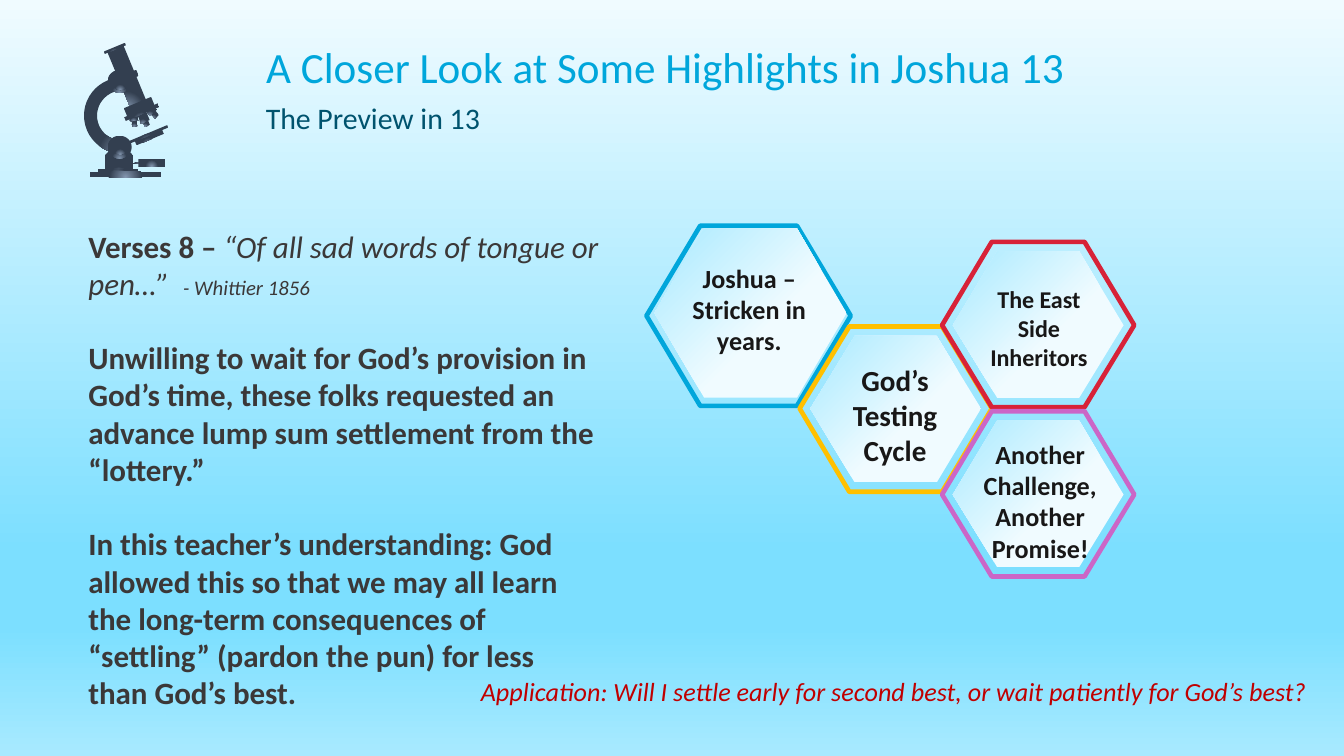
"""Build the Joshua 13 highlights slide with its microscope and hexagon cycle."""
from lxml import etree
from pptx import Presentation
from pptx import util as u
from pptx.dml.color import RGBColor
from pptx.enum import shapes, text
from pptx.oxml.ns import qn

PX = 9144
FONT = "Calibri"


def shade(fill, element, stops, angle=None):
    """Give a fill a linear gradient, or a radial one when no angle is set."""
    fill.gradient()
    stop_list = element.find(".//" + qn("a:gsLst"))
    for old in list(stop_list):
        stop_list.remove(old)
    for position, color in stops:
        stop = etree.SubElement(stop_list, qn("a:gs"), pos=str(position * 1000))
        etree.SubElement(stop, qn("a:srgbClr"), val=color)
    if angle is not None:
        fill.gradient_angle = angle
        return
    linear = element.find(".//" + qn("a:lin"))
    radial = etree.Element(qn("a:path"), path="circle")
    etree.SubElement(radial, qn("a:fillToRect"), l="50000", t="130000", r="50000", b="-30000")
    linear.getparent().replace(linear, radial)


def write(box, place, paragraphs, align=text.PP_ALIGN.LEFT, gap=0, wrap=True):
    """Place a box and fill it with paragraphs of (words, size, color, bold, italic)."""
    box.left, box.top, box.width, box.height = [u.Emu(v * PX) for v in place]
    frame = box.text_frame
    frame.word_wrap = wrap
    frame.auto_size = text.MSO_AUTO_SIZE.NONE
    for index, pieces in enumerate(paragraphs):
        paragraph = frame.add_paragraph() if index else frame.paragraphs[0]
        paragraph.alignment = align
        paragraph.space_before = u.Pt(gap if index else 0)
        for words, size, color, bold, italic in pieces:
            run = paragraph.add_run()
            run.text = words
            run.font.name, run.font.size = FONT, u.Pt(size)
            run.font.bold, run.font.italic = bold, italic
            run.font.color.rgb = RGBColor.from_string(color)


deck = Presentation()
deck.slide_width = u.Emu(1000 * PX)
deck.slide_height = u.Emu(deck.slide_width * 9 // 16)
slide = deck.slides.add_slide(deck.slide_layouts[5])
shade(slide.background.fill, slide.element,
      [(0, "F0FBFF"), (73, "7CDFFF"), (83, "7CDFFF"), (100, "A8EAFF")], 270)

RECT, OVAL = shapes.MSO_SHAPE.RECTANGLE, shapes.MSO_SHAPE.OVAL
SNIP, ARC = shapes.MSO_SHAPE.SNIP_2_SAME_RECTANGLE, shapes.MSO_SHAPE.BLOCK_ARC
microscope_parts = [
    (RECT, 100, 100, 22, 4, 337.3, []),
    (RECT, 95, 99, 31, 2, 337.3, []),
    (SNIP, 78, 109, 21, 22, 0, [0.31, 0]),
    (RECT, 106, 85, 4, 9, 337.5, []),
    (RECT, 103, 82, 7, 9, 337.5, []),
    (RECT, 88, 34, 13, 46, 337.5, []),
    (RECT, 77, 35, 17, 2, 337.5, []),
    (RECT, 86, 55, 17, 5, 337.5, []),
    (RECT, 93, 76, 22, 9, 337.5, []),
    (RECT, 112, 79, 4, 9, 319.5, []),
    (RECT, 108, 76, 7, 9, 319.5, []),
    (RECT, 98, 85, 4, 9, 355.5, []),
    (RECT, 96, 81, 7, 9, 355.5, []),
    (RECT, 92, 82, 27, 3, 337.5, []),
    (ARC, 63, 57, 57, 58, 270, [116.47, 0, 0.17]),
    (OVAL, 80, 52, 18, 17, 0, []),
    (OVAL, 83, 55, 13, 12, 0, []),
    (OVAL, 80, 101, 18, 17, 0, []),
    (OVAL, 83, 103, 13, 12, 0, []),
    (RECT, 93, 121, 26, 1, 0, []),
    (RECT, 103, 118, 20, 6, 0, []),
    (RECT, 73, 126, 30, 6, 0, []),
    (RECT, 67, 128, 53, 4, 0, []),
]
microscope = slide.shapes.add_group_shape()
for kind, left, top, width, height, turn, adjustments in microscope_parts:
    part = microscope.shapes.add_shape(kind, *[u.Emu(v * PX) for v in (left, top, width, height)])
    part.rotation = turn
    part.shadow.inherit = False
    part.line.fill.background()
    for index, value in enumerate(adjustments):
        part.adjustments[index] = value
    shade(part.fill, part.element, [(0, "8497B0"), (46, "333F50"), (100, "333F50")])

EVEN = (8, 7, 8, 7)
cycle = [
    ((481, 168, 152, 134), (6, 2, 3, 6), "00A6DB",
     "Joshua – Stricken in years.", 14, (500, 190, 115, 106)),
    ((595, 243, 143, 123), EVEN, "FFC000",
     "God’s Testing Cycle", 15.6, (612, 265, 108, 76)),
    ((701, 180, 143, 123), EVEN, "D72238",
     "The East Side Inheritors", 12.9, (719, 207, 108, 69)),
    ((701, 306, 143, 123), EVEN, "CB66C7",
     "Another Challenge, Another Promise!", 14, (720, 321, 108, 97)),
]
for rim, inset, color, label, size, label_place in cycle:
    left, top, width, height = rim
    core = (left + inset[0], top + inset[1],
            width - inset[0] - inset[2], height - inset[1] - inset[3])
    for x, y, w, h in (rim, core):
        corner = round(0.26 * w)
        outline = slide.shapes.build_freeform(x + corner, y, scale=PX)
        outline.add_line_segments([
            (x + w - corner, y), (x + w, y + h / 2), (x + w - corner, y + h),
            (x + corner, y + h), (x, y + h / 2)], close=True)
        hexagon = outline.convert_to_shape()
        hexagon.shadow.inherit = False
        if (x, y, w, h) == rim:
            hexagon.fill.background()
            hexagon.line.color.rgb = RGBColor.from_string(color)
            hexagon.line.width = u.Pt(2.5)
        else:
            hexagon.line.fill.background()
            shade(hexagon.fill, hexagon.element, [(41, "F0FBFF"), (100, "A8EAFF")], 135)
    write(slide.shapes.add_textbox(0, 0, 0, 0), label_place,
          [[(label, size, "181717", True, False)]], text.PP_ALIGN.CENTER)

GRAY = "3B3838"
commentary = [
    [("Verses 8 – ", 16.6, GRAY, True, False),
     ("“Of all sad words of tongue or pen…”  ", 16.6, GRAY, False, True),
     ("- Whittier 1856", 11.1, GRAY, False, True)],
    [("Unwilling to wait for God’s provision in God’s time, these folks requested an "
      "advance lump sum settlement from the “lottery.”", 16.6, GRAY, True, False)],
    [("In this teacher’s understanding: God allowed this so that we may all learn the "
      "long-term consequences of “settling” (pardon the pun) for less than God’s best.",
      16.6, GRAY, True, False)],
]
write(slide.shapes.add_textbox(0, 0, 0, 0), (56, 164, 400, 349), commentary, gap=20)

application = "Application: Will I settle early for second best, or wait patiently for God’s best?"
write(slide.shapes.add_textbox(0, 0, 0, 0), (348, 498, 634, 34),
      [[(application, 14, "C00000", False, True)]], wrap=False)

title = slide.shapes.title
write(title, (188, 23, 640, 52),
      [[("A Closer Look at Some Highlights in Joshua 13", 23.1, "00A6DB", False, False)]])
title.text_frame.vertical_anchor = text.MSO_ANCHOR.MIDDLE
write(slide.shapes.add_textbox(0, 0, 0, 0), (188, 69, 510, 37),
      [[("The Preview in 13", 16, "00536E", False, False)]])

deck.save("out.pptx")
